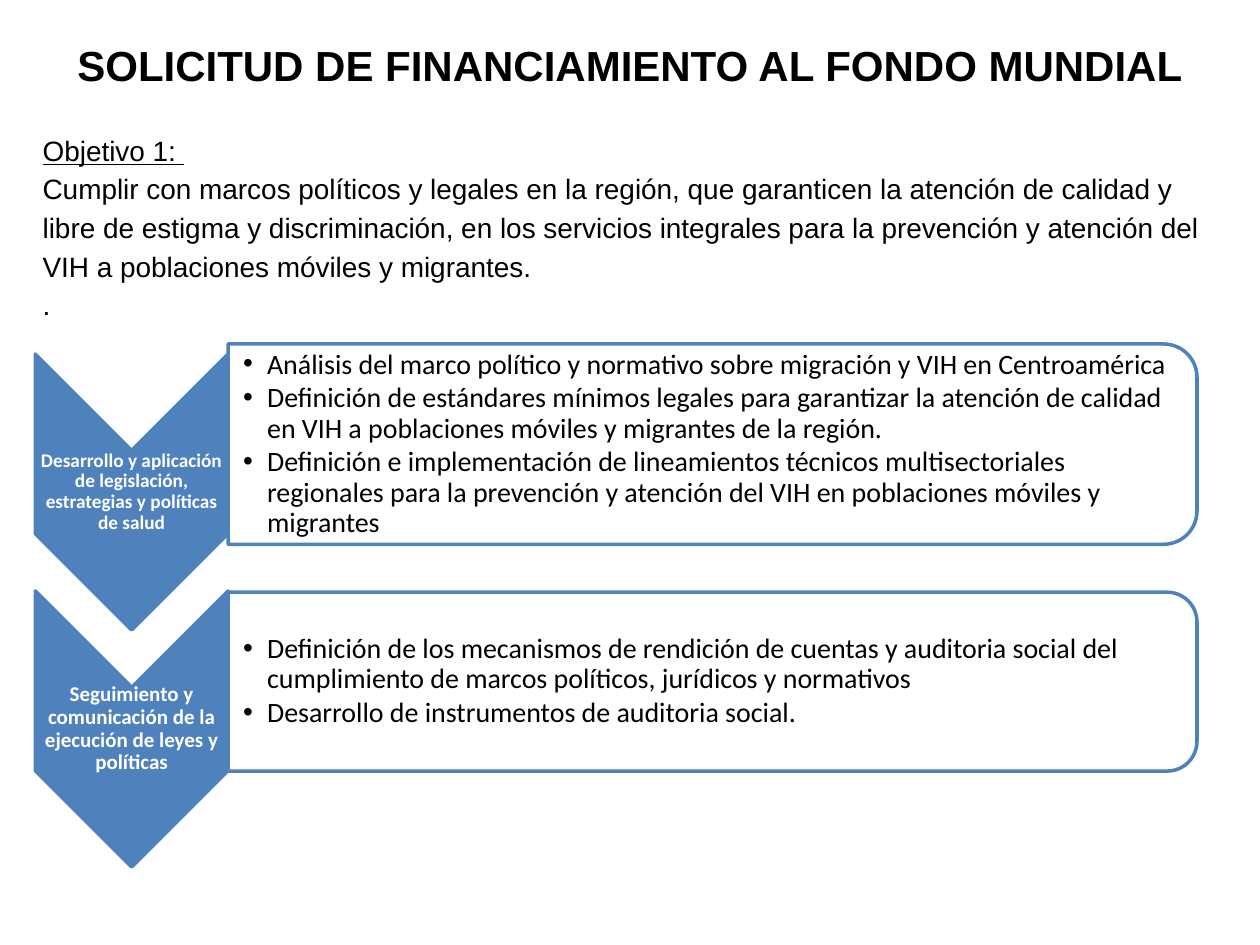
from pptx import Presentation
from pptx.dml.color import RGBColor
from pptx.enum.shapes import MSO_SHAPE
from pptx.enum.text import MSO_ANCHOR, MSO_AUTO_SIZE, PP_ALIGN
from pptx.oxml.ns import qn
from pptx.util import Inches, Pt
from lxml import etree

CHEVRON, PANEL = MSO_SHAPE.CHEVRON, MSO_SHAPE.ROUND_2_SAME_RECTANGLE
MIDDLE, FIXED = MSO_ANCHOR.MIDDLE, MSO_AUTO_SIZE.NONE
LEFT, CENTER = PP_ALIGN.LEFT, PP_ALIGN.CENTER
BLUE = RGBColor(0x4F, 0x81, 0xBD)
WHITE = RGBColor(0xFF, 0xFF, 0xFF)
BLACK = RGBColor(0, 0, 0)

# Content
TITLE = "SOLICITUD DE FINANCIAMIENTO AL FONDO MUNDIAL"
HEAD = "Objetivo 1: "
GOAL = ("Cumplir con marcos políticos y legales en la región, que garanticen la "
        "atención de calidad y libre de estigma y discriminación, en los servicios "
        "integrales para la prevención y atención del VIH a poblaciones móviles y "
        "migrantes.\v.")
STEPS = [
    dict(label="Desarrollo y aplicación de legislación, estrategias y políticas de salud",
         size=11, top=2.81, panel=(2.73, 1.59), items=[
             "Análisis del marco político y normativo sobre migración y VIH en "
             "Centroamérica",
             "Definición de estándares mínimos legales para garantizar la atención de "
             "calidad en VIH a poblaciones móviles y migrantes de la región.",
             "Definición e implementación de lineamientos técnicos multisectoriales "
             "regionales para la prevención y atención del VIH en poblaciones móviles "
             "y migrantes"]),
    dict(label="Seguimiento y comunicación de la ejecución de leyes y políticas",
         size=12, top=4.69, panel=(4.7, 1.42), items=[
             "Definición de los mecanismos de rendición de cuentas y auditoria social "
             "del cumplimiento de marcos políticos, jurídicos y normativos",
             "Desarrollo de instrumentos de auditoria social."]),
]

# Grid: chevron column, then panel column
EDGE, COL, TALL = 0.28, 1.53, 2.19
SPLIT, WIDE = EDGE + COL, 7.69
PAD = 0.07


def place(shape, x, y, w, h):
    shape.left, shape.top = Inches(x), Inches(y)
    shape.width, shape.height = Inches(w), Inches(h)


def write(shape, lines, font="Calibri", size=16, color=BLACK, bold=None,
          align=LEFT, lead=0.9, after=0, inset=(0.01,) * 4, hang=0):
    """Fill a text shape; each line is a list of (text, underline) runs."""
    frame = shape.text_frame
    frame.word_wrap, frame.auto_size = True, FIXED
    frame.vertical_anchor = MIDDLE
    (frame.margin_left, frame.margin_top,
     frame.margin_right, frame.margin_bottom) = map(Inches, inset)
    for i, line in enumerate(lines):
        para = frame.add_paragraph() if i else frame.paragraphs[0]
        para.alignment, para.line_spacing = align, lead
        para.space_before, para.space_after = Pt(0), Pt(after)
        if hang:
            props = para._p.get_or_add_pPr()
            props.set("marL", str(Inches(hang)))
            props.set("indent", str(-Inches(hang)))
            etree.SubElement(props, qn("a:buChar"), char="•")
        for text, under in line:
            for j, part in enumerate(text.split("\v")):
                if j:
                    para.add_line_break()
                run = para.add_run()
                run.text = part
                run.font.name, run.font.size = font, Pt(size)
                run.font.bold, run.font.underline = bold, under
                run.font.color.rgb = color


def turned(kind, x, y, w, h, fill):
    """Add a shape turned by 90 degrees that covers the given area."""
    shape = slide.shapes.add_shape(kind, 0, 0, 0, 0)
    place(shape, x + (w - h) / 2, y + (h - w) / 2, h, w)
    shape.rotation = 90
    shape.shadow.inherit = False
    shape.fill.solid()
    shape.fill.fore_color.rgb = fill
    shape.line.color.rgb, shape.line.width = BLUE, Pt(2)
    return shape


deck = Presentation()
deck.slide_width, deck.slide_height = Inches(10), Inches(7.5)
slide = deck.slides.add_slide(deck.slide_layouts[3])
title, *lists = [slide.placeholders[i] for i in range(3)]

# Title
place(title, 0.5, 0.21, 9, 0.61)
write(title, [[(TITLE, None)]], font="Arial", size=24, bold=True, align=CENTER,
      lead=1, inset=(0.1, 0.05, 0.1, 0.05))

# Objective; the deeper bottom inset lifts the text by half a line
goal = slide.shapes.add_textbox(0, 0, 0, 0)
place(goal, 0.24, 1.31, 9.53, 1.25)
write(goal, [[(HEAD + "\v", True), (GOAL, None)]], font="Arial", lead=1.15,
      inset=(0.1, 0.05, 0.1, 0.35))

# Steps
for step, body in zip(STEPS, lists):
    turned(CHEVRON, EDGE, step["top"], COL, TALL, BLUE)
    label = slide.shapes.add_textbox(0, 0, 0, 0)
    place(label, EDGE, step["top"] + COL / 2, COL, TALL - COL)
    write(label, [[(step["label"], None)]], size=step["size"], color=WHITE,
          bold=True, align=CENTER)

    top, high = step["panel"]
    panel = turned(PANEL, SPLIT, top, WIDE, high, WHITE)
    tint = panel._element.spPr.find(qn("a:solidFill"))[0]
    etree.SubElement(tint, qn("a:alpha"), val="90000")

    # The list lies in front of its panel
    slide.shapes._spTree.append(body._element)
    place(body, SPLIT, top + PAD, WIDE - PAD, high - 2 * PAD)
    write(body, [[(item, None)] for item in step["items"]], after=2,
          inset=(0.12, 0.01, 0.01, 0.01), hang=0.19)

deck.save("out.pptx")
